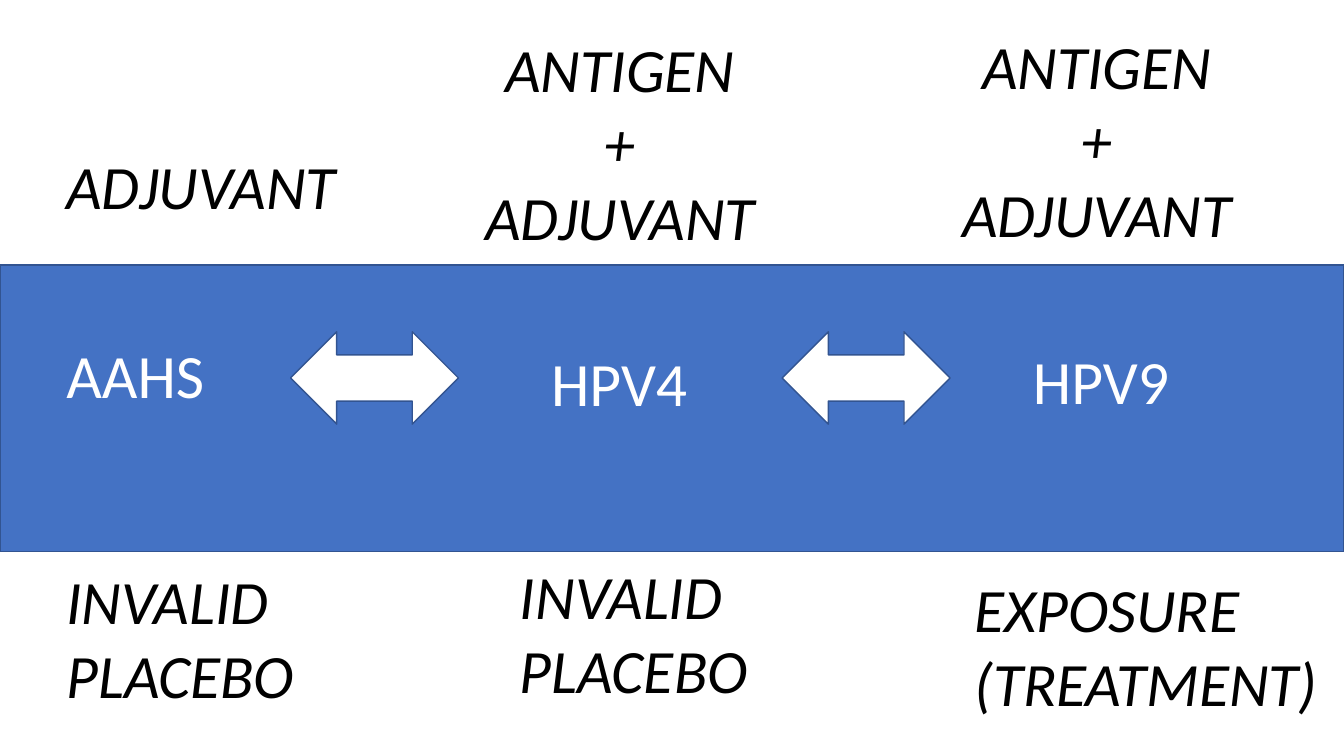
from lxml import etree
from pptx import Presentation
from pptx import util as u
from pptx.dml.color import RGBColor
from pptx.enum import shapes, text

BLUE = RGBColor(0x44, 0x72, 0xC4)
OUTLINE = RGBColor(0x32, 0x54, 0x91)
WHITE = RGBColor(0xFF, 0xFF, 0xFF)
BLACK = RGBColor(0, 0, 0)
LEFT = text.PP_ALIGN.LEFT
CENTER = text.PP_ALIGN.CENTER

deck = Presentation()
deck.slide_width = u.Pt(960)
deck.slide_height = u.Pt(540)
page = deck.slides.add_slide(deck.slide_layouts[6])


def add_figure(preset, left, top, width, height, color):
    figure = page.shapes.add_shape(
        preset, u.Pt(left), u.Pt(top), u.Pt(width), u.Pt(height))
    figure.shadow.inherit = False
    figure.fill.solid()
    figure.fill.fore_color.rgb = color
    figure.line.color.rgb = OUTLINE
    figure.line.width = u.Pt(1)


def add_label(lines, left, top, width, color, italic, align):
    height = 7.2 + 53 * len(lines)
    box = page.shapes.add_textbox(
        u.Pt(left), u.Pt(top), u.Pt(width), u.Pt(height))
    frame = box.text_frame
    frame.word_wrap = False
    frame.auto_size = text.MSO_AUTO_SIZE.SHAPE_TO_FIT_TEXT
    for number, line in enumerate(lines):
        para = frame.add_paragraph() if number else frame.paragraphs[0]
        para.alignment = align
        span = para.add_run()
        span.text = line
        span.font.name = "Calibri"
        span.font.size = u.Pt(44)
        span.font.italic = italic
        span.font.color.rgb = color


add_figure(shapes.MSO_SHAPE.RECTANGLE, 0, 189.4, 960, 204.5, BLUE)
for arrow_left in (207.5, 558.7):
    add_figure(shapes.MSO_SHAPE.LEFT_RIGHT_ARROW, arrow_left, 237, 120, 66, WHITE)

vaccines = [
    ("AAHS", 40.3, 237, 114.5),
    ("HPV4", 386.6, 242.6, 112.3),
    ("HPV9", 730.8, 241.2, 112.3),
]
for name, left, top, width in vaccines:
    add_label([name], left, top, width, WHITE, False, LEFT)

contents = [
    (["ADJUVANT"], 40.3, 102.2, LEFT),
    (["ANTIGEN", "+", "ADJUVANT"], 338.4, 18.7, CENTER),
    (["ANTIGEN", "+", "ADJUVANT"], 679, 16.6, CENTER),
]
for lines, left, top, align in contents:
    add_label(lines, left, top, 209.2, BLACK, True, align)

roles = [
    (["INVALID", "PLACEBO"], 40.3, 398.9, 179.3),
    (["INVALID", "PLACEBO"], 364.3, 395.3, 179.3),
    (["EXPOSURE", "(TREATMENT)"], 689, 404.6, 262.8),
]
for lines, left, top, width in roles:
    add_label(lines, left, top, width, BLACK, True, LEFT)

deck.save("out.pptx")
